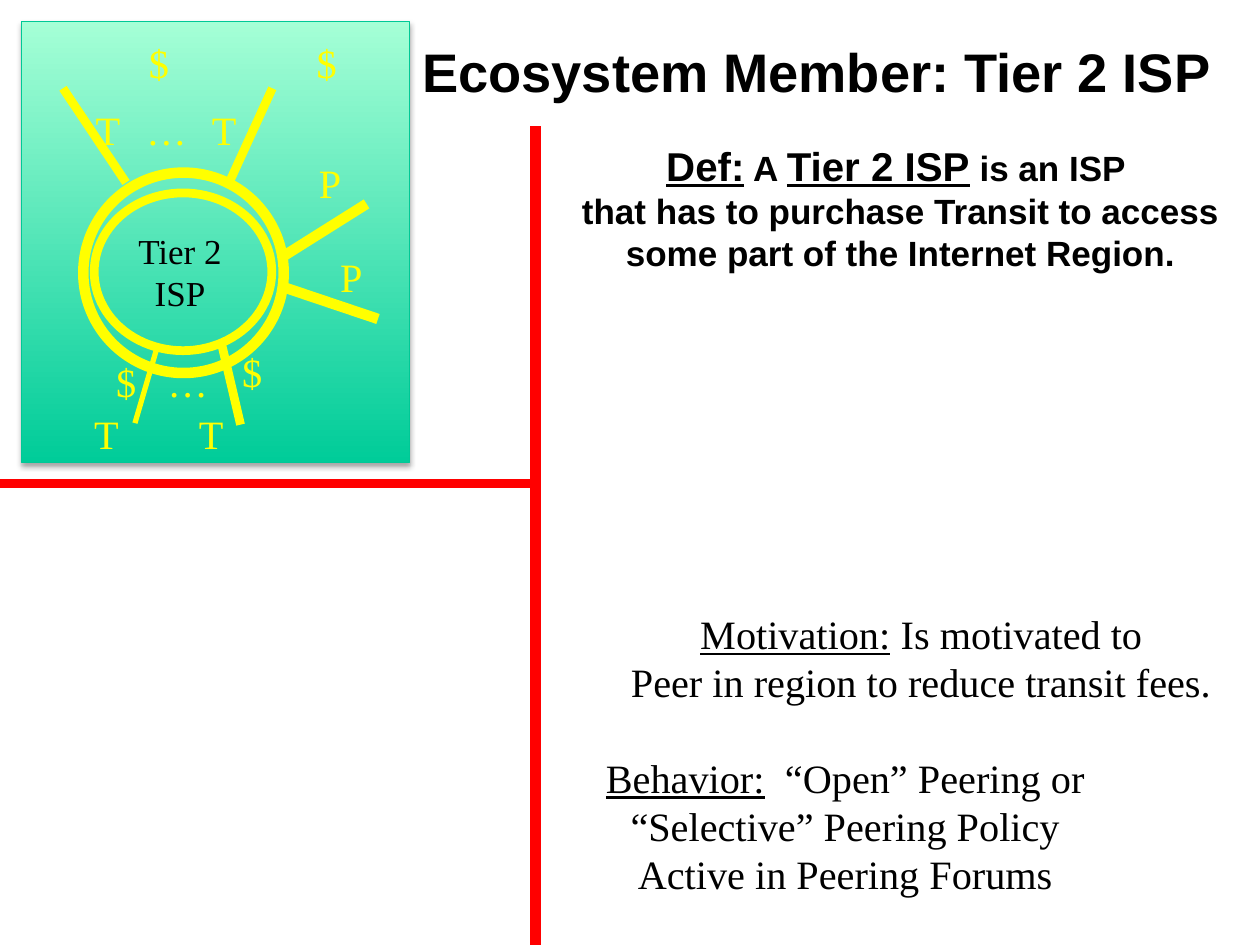
from dataclasses import dataclass

from lxml import etree
from pptx import Presentation
from pptx.dml.color import RGBColor
from pptx.enum.shapes import MSO_CONNECTOR, MSO_SHAPE
from pptx.enum.text import MSO_ANCHOR, PP_ALIGN
from pptx.oxml.ns import qn
from pptx.util import Cm, Pt

RECTANGLE, OVAL = MSO_SHAPE.RECTANGLE, MSO_SHAPE.OVAL
STRAIGHT = MSO_CONNECTOR.STRAIGHT
MIDDLE, CENTER = MSO_ANCHOR.MIDDLE, PP_ALIGN.CENTER


@dataclass(frozen=True)
class Theme:
    """Colours, fonts and type sizes of the slide."""
    ink: RGBColor = RGBColor(0, 0, 0)
    network: RGBColor = RGBColor(0xFF, 0xFF, 0)
    divider: RGBColor = RGBColor(0xFF, 0, 0)
    panel_edge: RGBColor = RGBColor(0, 0xC8, 0x96)
    panel_bottom: RGBColor = RGBColor(0, 0xCC, 0x99)
    panel_top: RGBColor = RGBColor(0xA5, 0xFF, 0xD6)
    sans: str = "Arial"
    serif: str = "Times New Roman"
    title: int = 31
    large: int = 23
    body: int = 20


class Painter:
    """Draws each kind of element on the current page or group."""

    def __init__(self, page, theme):
        """Keep the page's shapes and the theme."""
        self.shapes = page.shapes
        self.theme = theme

    def start_group(self):
        """Send the following elements into a new group."""
        self.shapes = self.shapes.add_group_shape().shapes

    def panel(self, left, top, width, height):
        """Draw the shaded gradient panel."""
        box = self.shapes.add_shape(RECTANGLE, Cm(left), Cm(top), Cm(width), Cm(height))
        box.fill.gradient()
        box.fill.gradient_angle = 90
        colors = (self.theme.panel_bottom, self.theme.panel_top)
        for stop, color in zip(box.fill.gradient_stops, colors):
            stop.color.rgb = color
        box.line.color.rgb = self.theme.panel_edge
        box.line.width = Pt(0.75)
        box.shadow.inherit = False
        effects = box._element.spPr.find(qn("a:effectLst"))
        shadow = etree.SubElement(effects, qn("a:outerShdw"), blurRad=str(Pt(3.1)),
                                  dist=str(Pt(1.8)), dir="5400000", rotWithShape="0")
        shade = etree.SubElement(shadow, qn("a:srgbClr"), val="000000")
        etree.SubElement(shade, qn("a:alpha"), val="35000")

    def ring(self, left, top, width, height, weight):
        """Draw an unfilled network ring."""
        ring = self.shapes.add_shape(OVAL, Cm(left), Cm(top), Cm(width), Cm(height))
        ring.shadow.inherit = False
        ring.fill.background()
        ring.line.color.rgb = self.theme.network
        ring.line.width = Pt(weight)

    def line(self, start, end, color, weight):
        """Draw a straight line between two points."""
        line = self.shapes.add_connector(STRAIGHT, *map(Cm, start + end))
        line.line.color.rgb = color
        line.line.width = Pt(weight)
        etree.SubElement(line._element.spPr, qn("a:effectLst"))

    def text(self, place, paragraphs, font, size, color=None, bold=False, wrap=False):
        """Write centred paragraphs of (text, underlined, size) spans."""
        box = self.shapes.add_textbox(*map(Cm, place))
        frame = box.text_frame
        frame.word_wrap = wrap
        frame.vertical_anchor = MIDDLE
        frame.margin_left = frame.margin_right = frame.margin_top = frame.margin_bottom = 0
        for index, spans in enumerate(paragraphs):
            para = frame.add_paragraph() if index else frame.paragraphs[0]
            para.alignment = CENTER
            para.font.name = font
            para.font.size = Pt(size)
            para.font.bold = bold
            para.font.color.rgb = color or self.theme.ink
            for wording, underlined, span_size in spans:
                span = para.add_run()
                span.text = wording
                if underlined:
                    span.font.underline = True
                if span_size != size:
                    span.font.size = Pt(span_size)


def plain(wording, size):
    """Return a paragraph of one plain span."""
    return [(wording, False, size)]


def main():
    """Build and save the slide."""
    deck = Presentation()
    deck.slide_width, deck.slide_height = Cm(25.4), Cm(19.05)
    page = deck.slides.add_slide(deck.slide_layouts[6])
    theme = Theme()
    painter = Painter(page, theme)
    large, body = theme.large, theme.body

    painter.panel(0.43, 0.43, 7.82, 8.89)
    painter.text((8.43, 0.76, 16.05, 1.32), [plain("Ecosystem Member: Tier 2 ISP", theme.title)],
                 theme.sans, theme.title, bold=True)

    labels = {
        "T": (0.48, [(1.9, 8.25), (4.01, 8.25), (1.93, 2.11), (4.27, 2.11)]),
        "$": (0.41, [(4.88, 6.99), (2.34, 7.19), (6.38, 0.76), (3, 0.76)]),
        "…": (0.81, [(3.38, 7.19), (2.95, 2.11)]),
        "P": (0.43, [(6.43, 3.18), (6.86, 5.08)]),
    }
    for label, (width, corners) in labels.items():
        for left, top in corners:
            painter.text((left, top, width, 0.99), [plain(label, large)],
                         theme.serif, large, theme.network)

    definition = [
        [("Def:", True, large), (" A ", False, body),
         ("Tier 2 ISP", True, large), (" is an ISP ", False, body)],
        plain("that has to purchase Transit to access ", body),
        plain("some part of the Internet Region.", body),
    ]
    motivation = [
        [("Motivation:", True, large), (" Is motivated to", False, large)],
        plain("Peer in region to reduce transit fees. ", large),
    ]
    behavior = [
        [("Behavior:", True, large), ("  “Open” Peering or", False, large)],
        plain("“Selective” Peering Policy", large),
        plain("Active in Peering Forums", large),
    ]
    painter.text((11.68, 2.79, 12.95, 2.77), definition, theme.sans, body, bold=True)
    painter.text((12.67, 12.27, 11.81, 1.96), motivation, theme.serif, large)
    painter.text((12.17, 15.16, 9.75, 2.95), behavior, theme.serif, large)

    painter.line((0, 9.75), (10.8, 9.75), theme.divider, 5)
    painter.line((10.8, 2.54), (10.8, 19.05), theme.divider, 6)

    painter.start_group()
    painter.ring(1.9, 3.89, 3.58, 3.18, 5)
    painter.text((2.34, 5.05, 2.58, 0.86), [plain("Tier 2 ISP", body)],
                 theme.serif, body, wrap=True)
    painter.ring(1.68, 3.48, 4.04, 4.04, 6)
    links = [
        ((3.15, 7.06), (2.72, 8.53), 3),
        ((4.45, 6.86), (4.85, 8.56), 5),
        ((5.72, 5.16), (7.39, 4.11), 6),
        ((5.72, 5.79), (7.62, 6.43), 6),
        ((2.54, 3.68), (1.27, 1.78), 5),
        ((4.62, 3.68), (5.49, 1.78), 5),
    ]
    for start, end, weight in links:
        painter.line(start, end, theme.network, weight)

    deck.save("out.pptx")


if __name__ == "__main__":
    main()
